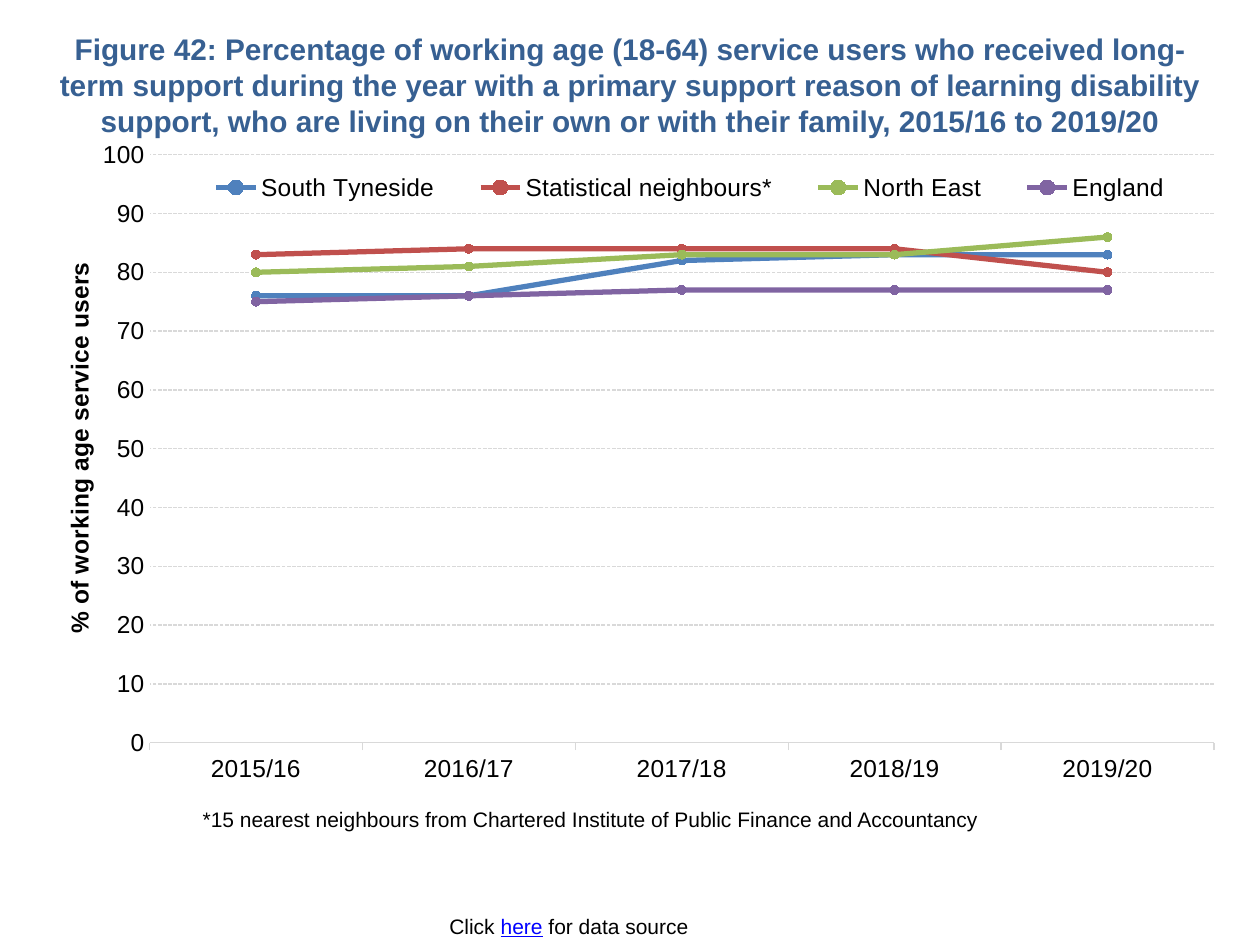
import pptx
import pptx.util
import pptx.chart.data
import pptx.dml.color
import pptx.enum.chart
import pptx.enum.dml
import pptx.enum.text
import pptx.oxml
import pptx.oxml.ns

Inches, Pt = pptx.util.Inches, pptx.util.Pt
enum = pptx.enum
qn = pptx.oxml.ns.qn
rgb = pptx.dml.color.RGBColor.from_string

hues = {
    "title": "376092", "text": "000000", "link": "0000FF", "grid": "D9D9D9",
    "South Tyneside": "4F81BD", "Statistical neighbours*": "C0504D",
    "North East": "9BBB59", "England": "8064A2",
}


def style(font, size, hue="text", bold=False):
    font.name = "Arial"
    font.size = Pt(size)
    font.bold = bold
    font.color.rgb = rgb(hues[hue])


def place(node, index, **box):
    """Give a chart part a fixed place, as fractions of the chart."""
    old = node.find(qn("c:layout"))
    if old is not None:
        node.remove(old)
    tags = "".join(f'<c:{tag} val="{val}"/>' for tag, val in box.items())
    node.insert(index, pptx.oxml.parse_xml(
        '<c:layout xmlns:c="http://schemas.openxmlformats.org/drawingml/2006/chart">'
        f"<c:manualLayout>{tags}</c:manualLayout></c:layout>"))


deck = pptx.Presentation()
deck.slide_width, deck.slide_height = Inches(10), Inches(7.5)
slide = deck.slides.add_slide(deck.slide_layouts[5])

# Title
title = slide.shapes.title
title.left, title.top = Inches(0.28), Inches(0.25)
title.width, title.height = Inches(9.45), Inches(0.84)
frame = title.text_frame
frame.text = ("Figure 42: Percentage of working age (18-64) service users who "
              "received long-term support during the year with a primary support "
              "reason of learning disability support, who are living on their own "
              "or with their family, 2015/16 to 2019/20")
frame.auto_size = enum.text.MSO_AUTO_SIZE.NONE
frame.vertical_anchor = enum.text.MSO_ANCHOR.MIDDLE
frame.paragraphs[0].alignment = enum.text.PP_ALIGN.CENTER
style(frame.paragraphs[0].runs[0].font, 17, "title", True)

# Chart data
data = pptx.chart.data.CategoryChartData(number_format="0")
data.categories = ["2015/16", "2016/17", "2017/18", "2018/19", "2019/20"]
data.add_series("South Tyneside", [76, 76, 82, 83, 83])
data.add_series("Statistical neighbours*", [83, 84, 84, 84, 80])
data.add_series("North East", [80, 81, 83, 83, 86])
data.add_series("England", [75, 76, 77, 77, 77])
chart = slide.shapes.add_chart(
    enum.chart.XL_CHART_TYPE.LINE_MARKERS, Inches(0.28), Inches(1.09),
    Inches(9.45), Inches(5.31), data).chart
chart.has_title = False
style(chart.font, 10)
place(chart.plots[0]._element.getparent(), 0, layoutTarget="inner",
      xMode="edge", yMode="edge", x=0.096, y=0.026, w=0.894, h=0.879)

# Lines and markers
chart.plots[0].vary_by_categories = False
for line in chart.plots[0].series:
    hue = rgb(hues[line.name])
    line.smooth = False
    line.format.line.width = Pt(3)
    line.format.line.color.rgb = hue
    mark = line.marker
    mark.style = enum.chart.XL_MARKER_STYLE.CIRCLE
    mark.size = 5
    mark.format.fill.solid()
    mark.format.fill.fore_color.rgb = hue
    mark.format.line.color.rgb = hue

# Axes
years, share = chart.category_axis, chart.value_axis
for axis in (years, share):
    style(axis.tick_labels.font, 14)
years.major_tick_mark = enum.chart.XL_TICK_MARK.OUTSIDE
share.major_tick_mark = enum.chart.XL_TICK_MARK.NONE
share.minimum_scale, share.maximum_scale, share.major_unit = 0, 100, 10
share.tick_labels.number_format = "0"
share.tick_labels.number_format_is_linked = False
share.format.line.fill.background()
share.has_major_gridlines = True
grid = share.major_gridlines.format.line
for rule in (years.format.line, grid):
    rule.width = Pt(0.75)
    rule.color.rgb = rgb(hues["grid"])
grid.dash_style = enum.dml.MSO_LINE.SQUARE_DOT

# Axis title
name = share.axis_title
name.text_frame.text = "% of working age service users"
style(name.text_frame.paragraphs[0].runs[0].font, 14, bold=True)
place(name._element, 1, xMode="edge", yMode="edge", x=0.02, y=0.18)

# Legend across the top of the plot
chart.has_legend = True
legend = chart.legend
legend.position = enum.chart.XL_LEGEND_POSITION.RIGHT
legend.include_in_layout = False
style(legend.font, 14)
place(legend._element, 1, xMode="edge", yMode="edge",
      x=0.12, y=0.04, w=0.86, h=0.07)

# Source line and footnote
notes = [
    (3.44, 7.2, 2.15, ["Click ", "here", " for data source"],
     enum.text.PP_ALIGN.CENTER, enum.text.MSO_ANCHOR.MIDDLE),
    (1.51, 6.35, 6.42, ["*15 nearest neighbours from Chartered Institute of "
                        "Public Finance and Accountancy"],
     enum.text.PP_ALIGN.LEFT, enum.text.MSO_ANCHOR.TOP),
]
for left, top, width, parts, align, anchor in notes:
    frame = slide.shapes.add_textbox(
        Inches(left), Inches(top), Inches(width), Inches(0.3)).text_frame
    frame.word_wrap = True
    frame.auto_size = enum.text.MSO_AUTO_SIZE.SHAPE_TO_FIT_TEXT
    frame.vertical_anchor = anchor
    para = frame.paragraphs[0]
    para.alignment = align
    for part in parts:
        run = para.add_run()
        run.text = part
        style(run.font, 12, "link" if part == "here" else "text")
        run.font.underline = part == "here"

deck.save("out.pptx")
